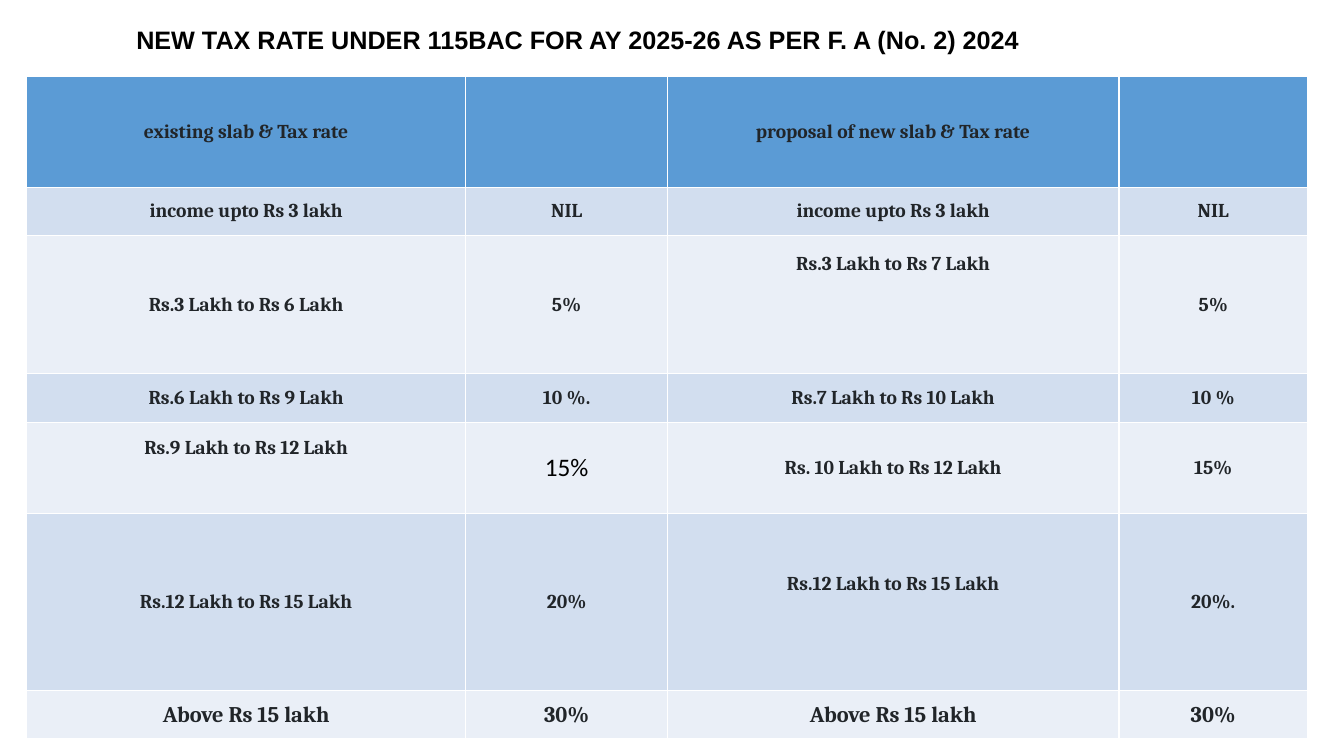
import pptx
import pptx.dml.color
import pptx.enum.text
import pptx.util

Cm = pptx.util.Cm
Pt = pptx.util.Pt
RGB = pptx.dml.color.RGBColor.from_string

THEME = {
    "header_fill": RGB("5B9BD5"),
    "band_fills": [RGB("EAEFF7"), RGB("D2DEEF")],
    "black": RGB("000000"),
    "dark": RGB("212529"),
    "title_size": Pt(18),
    "body_size": Pt(14),
    "last_row_size": Pt(16),
    "plain_size": Pt(18),
}


def style_font(font, name, size, color, bold=True):
    font.name = name
    font.size = size
    font.color.rgb = color
    font.bold = bold


# Slide with title only
presentation = pptx.Presentation()
presentation.slide_width = Cm(33.87)
presentation.slide_height = Cm(19.05)
slide = presentation.slides.add_slide(presentation.slide_layouts[5])

# Title
title = slide.shapes.title
title.left, title.top, title.width, title.height = Cm(3.18), Cm(0.48), Cm(27.53), Cm(1.8)
title_frame = title.text_frame
title_frame.text = "NEW TAX RATE UNDER 115BAC FOR AY 2025-26 AS PER F. A (No. 2) 2024"
title_frame.word_wrap = True
title_frame.auto_size = pptx.enum.text.MSO_AUTO_SIZE.NONE
title_frame.vertical_anchor = pptx.enum.text.MSO_ANCHOR.TOP
title_paragraph = title_frame.paragraphs[0]
title_paragraph.alignment = pptx.enum.text.PP_ALIGN.LEFT
style_font(title_paragraph.runs[0].font, "Arial", THEME["title_size"], THEME["black"])

# Slabs and rates: existing on the left, proposed on the right
tax_rows = [
    ("existing slab & Tax rate", "", "proposal of new slab & Tax rate", ""),
    ("income upto Rs 3 lakh", "NIL", "income upto Rs 3 lakh", "NIL"),
    ("Rs.3 Lakh to Rs 6 Lakh", "5%", "Rs.3 Lakh to Rs 7 Lakh", "5%"),
    ("Rs.6 Lakh to Rs 9 Lakh", "10 %.", "Rs.7 Lakh to Rs 10 Lakh", "10 %"),
    ("Rs.9 Lakh to Rs 12 Lakh", "15%", "Rs. 10 Lakh to Rs 12 Lakh", "15%"),
    ("Rs.12 Lakh to Rs 15 Lakh", "20%", "Rs.12 Lakh to Rs 15 Lakh", "20%."),
    ("Above Rs 15 lakh", "30%", "Above Rs 15 lakh", "30%"),
]
column_widths = [11.07, 5.08, 11.38, 4.75]
row_heights = [2.79, 1.22, 3.48, 1.22, 2.29, 4.47, 1.22]
cell_margin = 0.18
raised_cells = {(2, 2): 2.07, (4, 0): 1.0, (5, 2): 0.91}  # extra bottom margin
plain_cell = (4, 1)
last_row = len(tax_rows) - 1

# Table
table = slide.shapes.add_table(
    len(tax_rows), len(column_widths),
    Cm(0.67), Cm(1.93), Cm(sum(column_widths)), Cm(sum(row_heights)),
).table
for column, width in zip(table.columns, column_widths):
    column.width = Cm(width)
for row, height in zip(table.rows, row_heights):
    row.height = Cm(height)

# Cells
for row_index, texts in enumerate(tax_rows):
    for column_index, text in enumerate(texts):
        position = (row_index, column_index)
        cell = table.cell(row_index, column_index)
        cell.fill.solid()
        cell.fill.fore_color.rgb = (
            THEME["band_fills"][row_index % 2] if row_index else THEME["header_fill"]
        )
        cell.vertical_anchor = pptx.enum.text.MSO_ANCHOR.MIDDLE
        cell.margin_left = cell.margin_right = cell.margin_top = Cm(cell_margin)
        cell.margin_bottom = Cm(cell_margin + raised_cells.get(position, 0))
        cell.text_frame.text = text
        paragraph = cell.text_frame.paragraphs[0]
        paragraph.alignment = pptx.enum.text.PP_ALIGN.CENTER
        size = THEME["last_row_size"] if row_index == last_row else THEME["body_size"]
        for run in paragraph.runs:
            if position == plain_cell:
                style_font(run.font, "Calibri", THEME["plain_size"], THEME["black"], False)
            else:
                style_font(run.font, "Cambria", size, THEME["dark"])

presentation.save("out.pptx")
